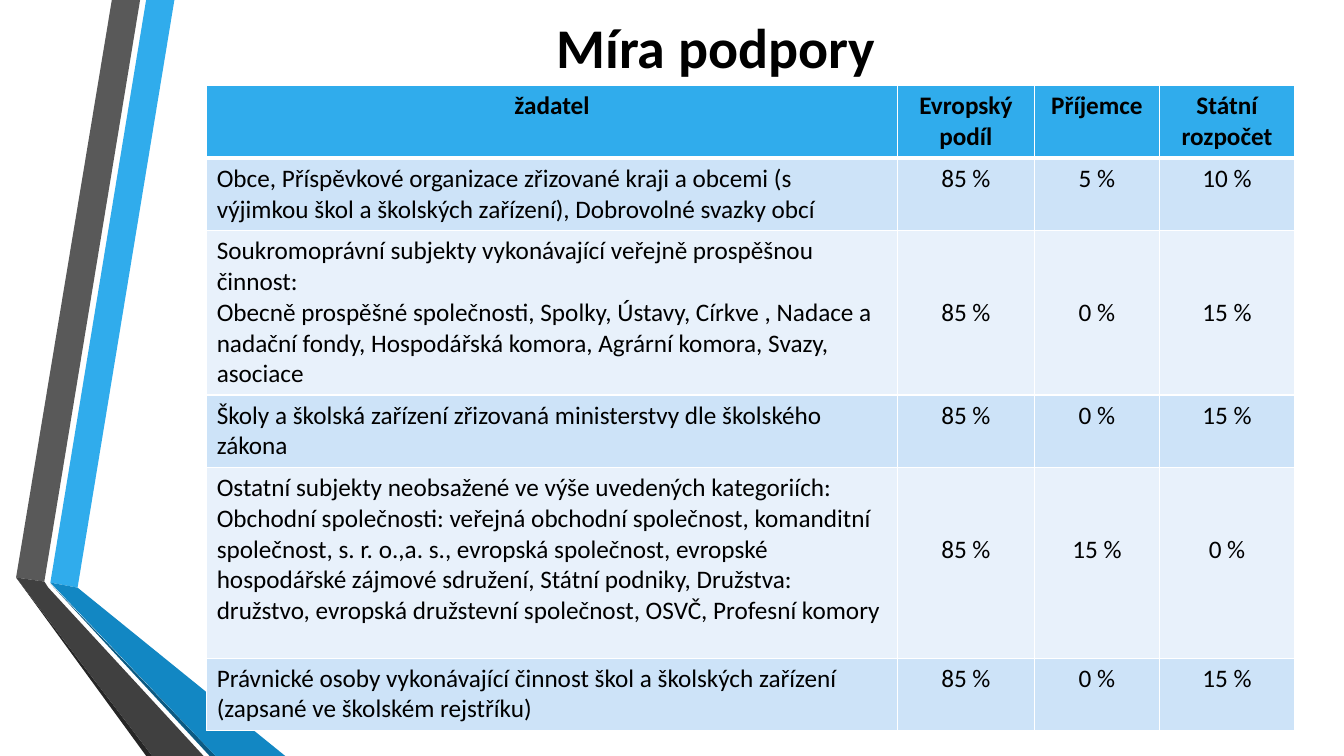
from lxml import etree
from pptx import Presentation
from pptx import util as u
from pptx.dml.color import RGBColor
from pptx.enum import text
from pptx.oxml import ns

PX = 9144  # EMU, 100 px to the inch
FONT = "Calibri"
BLACK = RGBColor(0x00, 0x00, 0x00)
WHITE = RGBColor(0xFF, 0xFF, 0xFF)
BLUE = RGBColor(0x30, 0xAC, 0xEC)
MID_BLUE = RGBColor(0x12, 0x87, 0xC3)
DARK_BLUE = RGBColor(0x0C, 0x5A, 0x82)
GREY = RGBColor(0x59, 0x59, 0x59)
DARK_GREY = RGBColor(0x40, 0x40, 0x40)
NEAR_BLACK = RGBColor(0x26, 0x26, 0x26)
BANDS = [RGBColor(0xE8, 0xF1, 0xFB), RGBColor(0xCD, 0xE3, 0xF8)]

# Corner points relative to the ribbon's box
RIBBON = [
    (BLUE, [(34, 578), (61, 583), (157, 0), (129, 0)]),
    (GREY, [(123, 0), (95, 0), (0, 573), (28, 577)]),
    (NEAR_BLACK, [(0, 573), (129, 750), (135, 750)]),
    (DARK_BLUE, [(34, 579), (192, 750), (198, 750)]),
    (MID_BLUE, [(34, 578), (198, 750), (267, 750), (61, 583)]),
    (DARK_GREY, [(186, 750), (32, 583), (28, 577), (0, 573), (135, 750)]),
]

COLUMNS = [685, 136, 124, 134]
ROW_HEIGHTS = [72, 72, 163, 72, 189, 72]
CELL_TOP = 5
LOWERED_TOP = 66  # two text lines below the usual top margin
ROWS = [
    ["žadatel", "Evropský podíl", "Příjemce", "Státní rozpočet"],
    ["Obce, Příspěvkové organizace zřizované kraji a obcemi (s výjimkou škol "
     "a školských zařízení), Dobrovolné svazky obcí", "85 %", "5 %", "10 %"],
    ["Soukromoprávní subjekty vykonávající veřejně prospěšnou činnost:\n"
     "Obecně prospěšné společnosti, Spolky, Ústavy, Církve , Nadace a nadační "
     "fondy, Hospodářská komora, Agrární komora, Svazy, asociace",
     "85 %", "0 %", "15 %"],
    ["Školy a školská zařízení zřizovaná ministerstvy dle školského zákona",
     "85 %", "0 %", "15 %"],
    ["Ostatní subjekty neobsažené ve výše uvedených kategoriích:\n"
     "Obchodní společnosti: veřejná obchodní společnost, komanditní "
     "společnost, s. r. o.,a. s., evropská společnost, evropské hospodářské "
     "zájmové sdružení, Státní podniky, Družstva: družstvo, evropská "
     "družstevní společnost, OSVČ, Profesní komory", "85 %", "15 %", "0 %"],
    ["Právnické osoby vykonávající činnost škol a školských zařízení "
     "(zapsané ve školském rejstříku)", "85 %", "0 %", "15 %"],
]


def format_text(tf, size, bold, align):
    values = {"name": FONT, "size": u.Pt(size), "bold": bold}
    for p in tf.paragraphs:
        p.alignment = align
        for r in p.runs:
            for name, value in values.items():
                setattr(r.font, name, value)
            r.font.color.rgb = BLACK


def add_ribbon(s, left, top):
    for color, points in RIBBON:
        corners = [(left + x, top + y) for x, y in points]
        builder = s.shapes.build_freeform(*corners[0], scale=PX)
        builder.add_line_segments(corners[1:], close=True)
        sp = builder.convert_to_shape()
        sp.shadow.inherit = False
        sp.fill.solid()
        sp.fill.fore_color.rgb = color
        sp.line.fill.background()


def add_title(s, left, top, width, height):
    sp = s.shapes.title
    box = {"left": left, "top": top, "width": width, "height": height}
    for name, value in box.items():
        setattr(sp, name, value * PX)
    tf = sp.text_frame
    tf.text = "Míra podpory"
    tf.vertical_anchor = text.MSO_ANCHOR.MIDDLE
    format_text(tf, 40, True, text.PP_ALIGN.CENTER)


def set_borders(cell, widths):
    """Draw white borders; widths maps the sides L, R, T and B to points."""
    tc_pr = cell._tc.get_or_add_tcPr()
    for side, width in widths.items():
        ln = etree.SubElement(tc_pr, ns.qn(f"a:ln{side}"), w=str(u.Pt(width)))
        fill = etree.SubElement(ln, ns.qn("a:solidFill"))
        etree.SubElement(fill, ns.qn("a:srgbClr"), val=str(WHITE))


def fill_cell(cell, row, col, words):
    header = row == 0
    cell.text = words
    lowered = col > 0 and "\n" in ROWS[row][0]
    cell.margin_top = (LOWERED_TOP if lowered else CELL_TOP) * PX
    set_borders(cell, {"L": 1, "R": 1, "T": 3 if row == 1 else 1,
                       "B": 3 if header else 1})
    cell.fill.solid()
    cell.fill.fore_color.rgb = BLUE if header else BANDS[row % 2]
    centred = header or col > 0
    format_text(cell.text_frame, 18, header,
                text.PP_ALIGN.CENTER if centred else text.PP_ALIGN.LEFT)


def add_support_table(s, left, top):
    frame = s.shapes.add_table(len(ROWS), len(COLUMNS), left * PX, top * PX,
                               sum(COLUMNS) * PX, sum(ROW_HEIGHTS) * PX)
    table = frame.table
    for column, width in zip(table.columns, COLUMNS):
        column.width = width * PX
    for row, height in enumerate(ROW_HEIGHTS):
        table.rows[row].height = height * PX
        for col, words in enumerate(ROWS[row]):
            fill_cell(table.cell(row, col), row, col, words)


def main():
    prs = Presentation()
    prs.slide_width, prs.slide_height = 1333 * PX, 750 * PX
    s = prs.slides.add_slide(prs.slide_layouts[5])
    add_ribbon(s, 16, 0)
    add_title(s, 162, 0, 1096, 91)
    add_support_table(s, 205, 85)
    prs.save("out.pptx")


if __name__ == "__main__":
    main()
